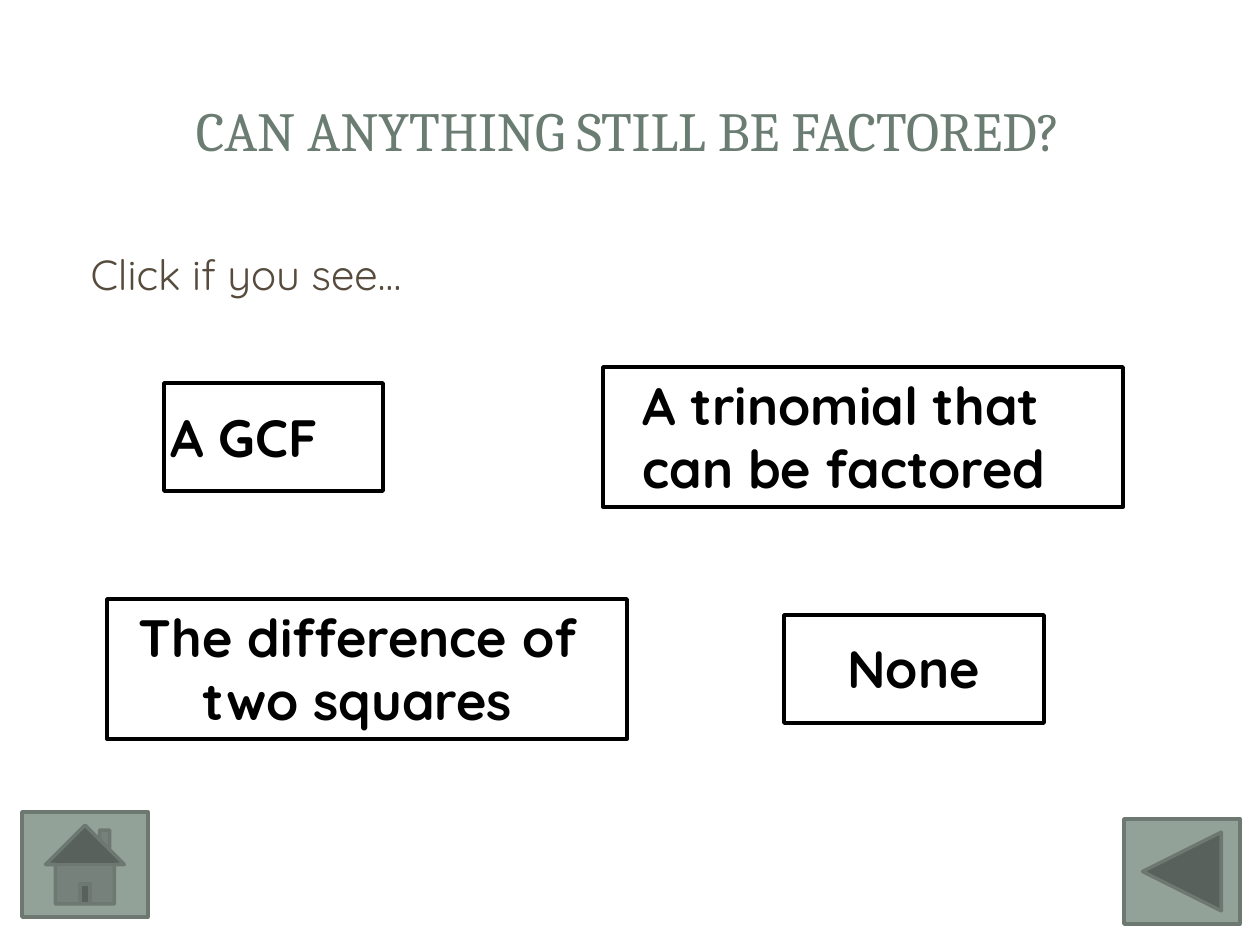
from pptx import Presentation
from pptx.dml.color import RGBColor
from pptx.enum.shapes import MSO_SHAPE as Shape
from pptx.enum.text import MSO_ANCHOR as Anchor, PP_ALIGN as Align
from pptx.util import Emu, Pt

PX = 914400 / 126

THEME = {
    "title": {"name": "Cambria", "size": Pt(31.5), "bold": False, "color": "6B7D72"},
    "prompt": {"name": "Quicksand", "size": Pt(24), "bold": False, "color": "564B3C"},
    "choice": {"name": "Quicksand", "size": Pt(30), "bold": True, "color": "000000"},
    "nav_fill": "93A299",
    "nav_line": "6D7871",
    "choice_line": "000000",
    "line_width": Pt(2),
}


def px(*lengths):
    return [Emu(round(length * PX)) for length in lengths]


def add_text(text, box, style, align=Align.LEFT, anchor=Anchor.TOP, indent=0):
    frame = slide.shapes.add_textbox(*px(*box)).text_frame
    frame.word_wrap = True
    frame.vertical_anchor = anchor
    frame.margin_left += px(indent)[0]
    paragraph = frame.paragraphs[0]
    paragraph.alignment = align
    run = paragraph.add_run()
    run.text = text
    for key, value in THEME[style].items():
        if key == "color":
            run.font.color.rgb = RGBColor.from_string(value)
        else:
            setattr(run.font, key, value)


deck = Presentation()
deck.slide_width, deck.slide_height = px(1260, 945)
slide = deck.slides.add_slide(deck.slide_layouts[6])

# Title and prompt
add_text("CAN ANYTHING STILL BE FACTORED?", (59, 57, 1138, 144), "title",
         Align.CENTER, Anchor.MIDDLE)
add_text("Click if you see…", (63, 242, 388, 84), "prompt", indent=15)

# Choice labels
choices = [
    ("A GCF", (158, 399, 231, 77), Align.LEFT),
    ("A trinomial that can be factored", (630, 367, 451, 140), Align.LEFT),
    ("The difference of two squares", (116, 599, 483, 140), Align.CENTER),
    ("None", (672, 630, 483, 77), Align.CENTER),
]
for label, box, align in choices:
    add_text(label, box, "choice", align)

# Navigation buttons, then the outlined buttons over the labels
nav = (THEME["nav_fill"], THEME["nav_line"])
outline = (None, THEME["choice_line"])
buttons = [
    (Shape.ACTION_BUTTON_BACK_OR_PREVIOUS, (1124, 819, 116, 105), nav),
    (Shape.ACTION_BUTTON_HOME, (22, 812, 126, 105), nav),
    (Shape.ACTION_BUTTON_CUSTOM, (164, 383, 219, 108), outline),
    (Shape.ACTION_BUTTON_CUSTOM, (603, 367, 520, 140), outline),
    (Shape.ACTION_BUTTON_CUSTOM, (107, 599, 520, 140), outline),
    (Shape.ACTION_BUTTON_CUSTOM, (784, 615, 260, 108), outline),
]
for kind, box, (fill, line) in buttons:
    button = slide.shapes.add_shape(kind, *px(*box))
    button.shadow.inherit = False
    if fill:
        button.fill.solid()
        button.fill.fore_color.rgb = RGBColor.from_string(fill)
    else:
        button.fill.background()
    button.line.color.rgb = RGBColor.from_string(line)
    button.line.width = THEME["line_width"]

deck.save("out.pptx")
